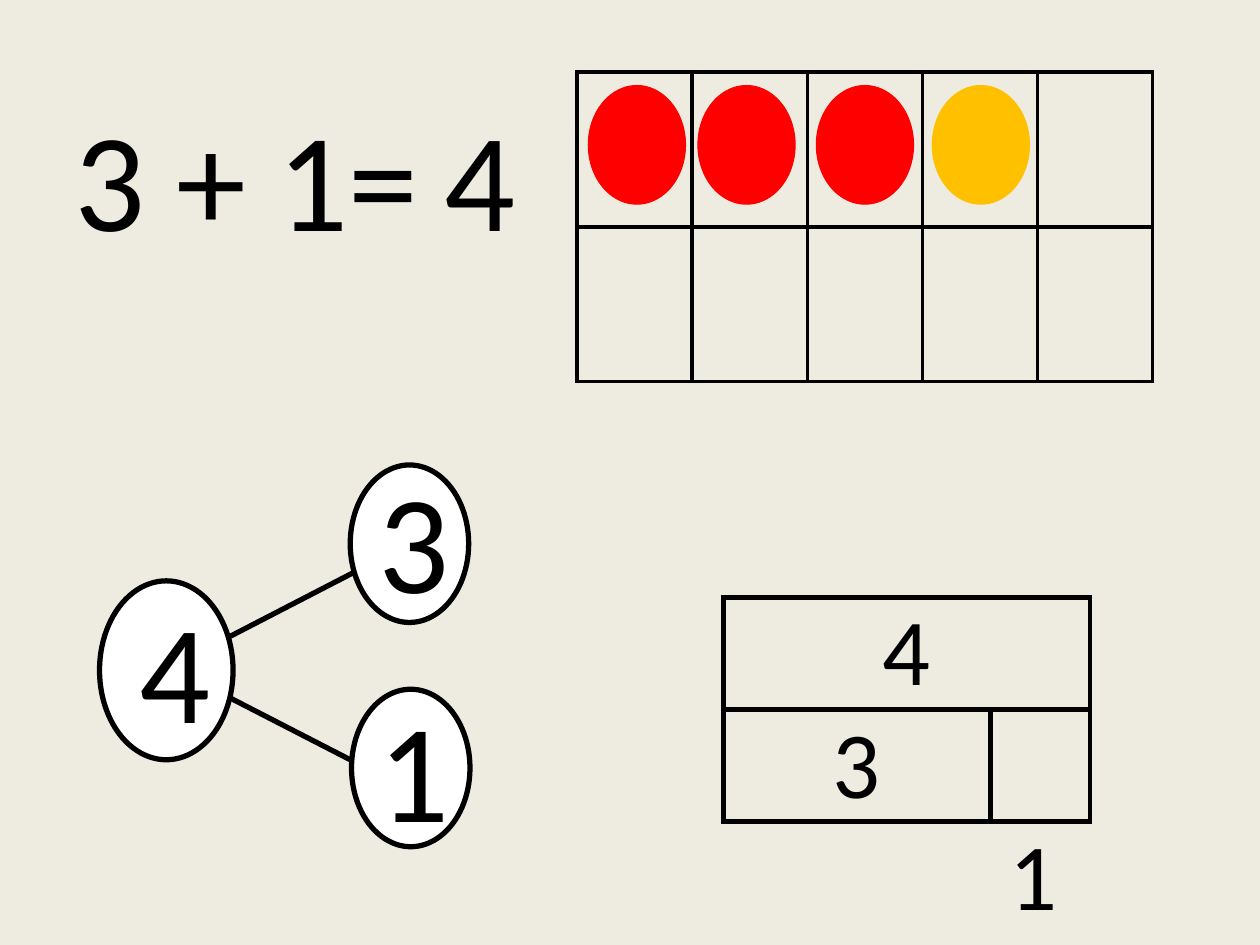
import itertools
from typing import NamedTuple

import lxml.etree
import pptx
import pptx.dml.color
import pptx.enum.shapes
import pptx.enum.text
import pptx.oxml.ns
import pptx.util

RGBColor = pptx.dml.color.RGBColor
BLACK = RGBColor(0x00, 0x00, 0x00)
WHITE = RGBColor(0xFF, 0xFF, 0xFF)
RED = RGBColor(0xFF, 0x00, 0x00)
AMBER = RGBColor(0xFF, 0xC0, 0x00)
CREAM = RGBColor(0xEE, 0xEC, 0xE1)

# The page is a grid of 100 columns by 75 rows
UNIT = pptx.util.Inches(0.1)
COLUMNS, ROWS = 100, 75
LEFT = pptx.enum.text.PP_ALIGN.LEFT
CENTER = pptx.enum.text.PP_ALIGN.CENTER


class Area(NamedTuple):
    column: float
    row: float
    width: float
    height: float


class Oval(NamedTuple):
    area: Area
    fill: RGBColor
    line: RGBColor
    weight: float


class Label(NamedTuple):
    text: str
    area: Area
    size: int
    alignment: pptx.enum.text.PP_ALIGN = CENTER


def grid(*lengths: float) -> list[int]:
    return [round(length * UNIT) for length in lengths]


def draw_link(page, start: tuple, end: tuple) -> None:
    link = page.shapes.add_connector(
        pptx.enum.shapes.MSO_CONNECTOR.STRAIGHT, *grid(*start, *end))
    link.line.color.rgb = BLACK
    link.line.width = pptx.util.Pt(3)
    lxml.etree.SubElement(link._element.spPr, pptx.oxml.ns.qn("a:effectLst"))


def draw_oval(page, oval: Oval) -> None:
    shape = page.shapes.add_shape(
        pptx.enum.shapes.MSO_SHAPE.OVAL, *grid(*oval.area))
    shape.shadow.inherit = False
    shape.fill.solid()
    shape.fill.fore_color.rgb = oval.fill
    shape.line.color.rgb = oval.line
    shape.line.width = pptx.util.Pt(oval.weight)


def set_borders(cell, weight: float) -> None:
    properties = cell._tc.get_or_add_tcPr()
    for index, side in enumerate(("lnL", "lnR", "lnT", "lnB")):
        border = lxml.etree.Element(
            pptx.oxml.ns.qn(f"a:{side}"), w=str(pptx.util.Pt(weight)))
        fill = lxml.etree.SubElement(border, pptx.oxml.ns.qn("a:solidFill"))
        lxml.etree.SubElement(
            fill, pptx.oxml.ns.qn("a:srgbClr"), val=str(BLACK))
        properties.insert(index, border)


def draw_table(page, area: Area, widths: list[float], rows: int,
               weight: float):
    table = page.shapes.add_table(rows, len(widths), *grid(*area)).table
    table.first_row = table.horz_banding = False
    for column, width in zip(table.columns, grid(*widths)):
        column.width = width
    for cell in table.iter_cells():
        cell.fill.background()
        set_borders(cell, weight)
    return table


def draw_label(page, label: Label) -> None:
    box = page.shapes.add_textbox(*grid(*label.area))
    box.text_frame.word_wrap = True
    para = box.text_frame.paragraphs[0]
    para.alignment = label.alignment
    span = para.add_run()
    span.text = label.text
    font_format = {"name": "Calibri", "size": pptx.util.Pt(label.size)}
    for name, value in font_format.items():
        setattr(span.font, name, value)
    span.font.color.rgb = BLACK


def main() -> None:
    deck = pptx.Presentation()
    deck.slide_width, deck.slide_height = grid(COLUMNS, ROWS)
    page = deck.slides.add_slide(deck.slide_layouts[6])
    page.background.fill.solid()
    page.background.fill.fore_color.rgb = CREAM

    # Number bond: links first, so that the circles cover their ends
    draw_link(page, (17.5, 55), (27.8, 60.3))
    draw_link(page, (17.5, 50.9), (29.5, 44.7))
    for area in (Area(7.9, 46.1, 10.6, 14.2),
                 Area(27.8, 36.9, 9.4, 12.5),
                 Area(27.9, 54.7, 9.4, 12.5)):
        draw_oval(page, Oval(area, WHITE, BLACK, 3))

    # Ten frame with its counters
    draw_table(page, Area(45.8, 5.7, 45.7, 24.6),
               list(itertools.repeat(45.7 / 5, 5)), 2, 2.25)
    counters = zip((46.7, 55.4, 64.8, 74), (RED, RED, RED, AMBER))
    for column, color in counters:
        draw_oval(page, Oval(Area(column, 6.8, 7.7, 9.4), color, color, 0.75))

    # Bar model: the whole above its two parts
    bars = draw_table(page, Area(57.4, 47.4, 29.1, 17.8), [21.2, 7.9], 2, 3)
    bars.cell(0, 0).merge(bars.cell(0, 1))

    # Numbers of the equation, the bond and the bars
    for label in (
        Label("3 + 1=", Area(4.9, 6.8, 30.5, 27.9), 80, LEFT),
        Label("4", Area(34.3, 6.8, 10.6, 14.5), 80, LEFT),
        Label("4", Area(10.1, 45.8, 7.3, 14.5), 80),
        Label("3", Area(29.1, 35.5, 7.3, 14.5), 80),
        Label("1", Area(29.1, 53.7, 7.3, 14.5), 80),
        Label("4", Area(68.3, 46.4, 7.3, 10.1), 54),
        Label("3", Area(64.3, 55.4, 7.3, 10.1), 54),
        Label(" 1", Area(78.4, 55.3, 7.3, 19.2), 54),
    ):
        draw_label(page, label)

    deck.save("out.pptx")


if __name__ == "__main__":
    main()
